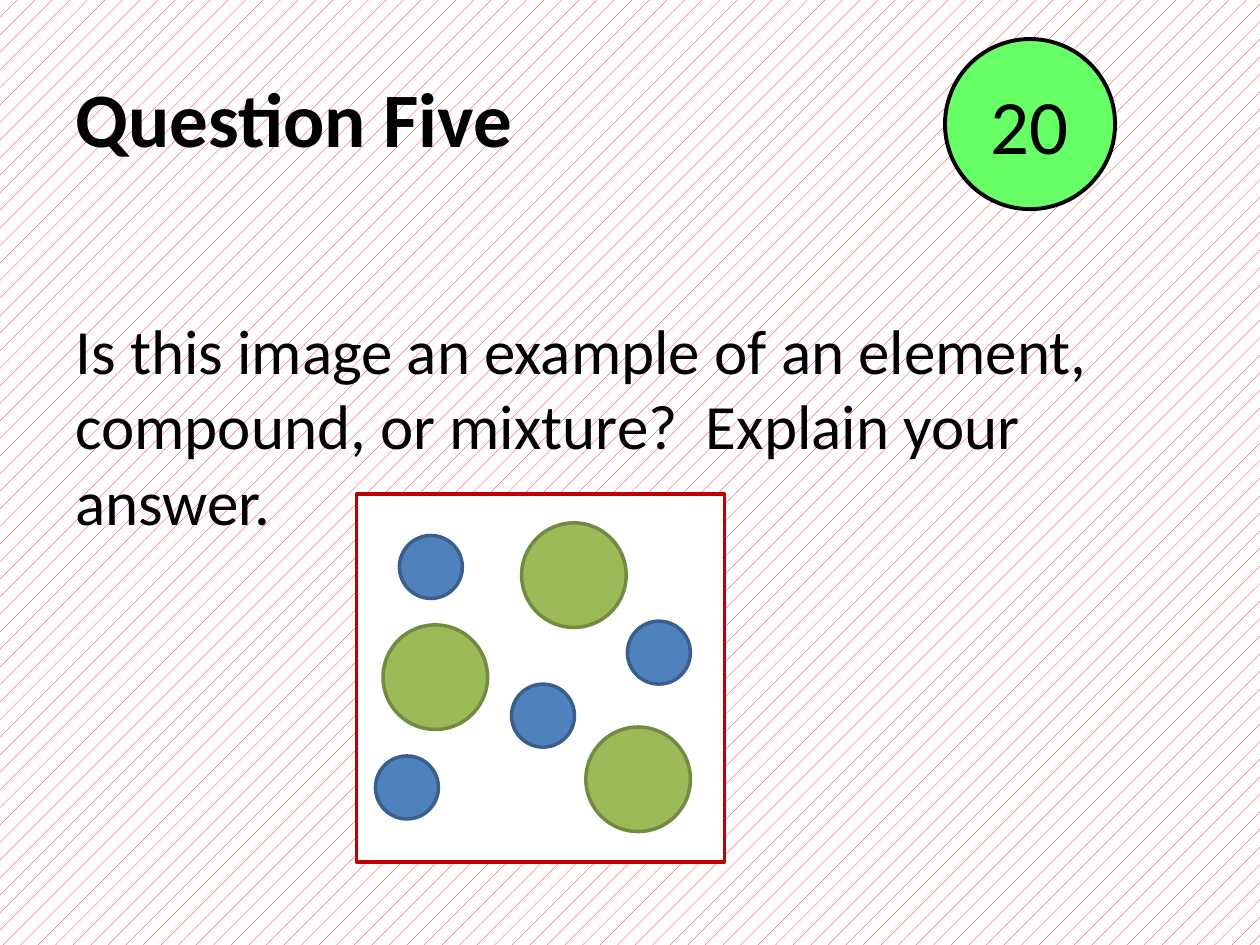
from pptx import Presentation, util as u
from pptx.dml.color import RGBColor
from pptx.enum import dml, shapes, text

BLACK = RGBColor(0x00, 0x00, 0x00)
WHITE = RGBColor(0xFF, 0xFF, 0xFF)
RED = RGBColor(0xFF, 0x00, 0x00)
DARK_RED = RGBColor(0xC0, 0x00, 0x00)
LIME = RGBColor(0x66, 0xFF, 0x66)
BLUE = RGBColor(0x4F, 0x81, 0xBD)
DARK_BLUE = RGBColor(0x3A, 0x5F, 0x8C)
GREEN = RGBColor(0x9B, 0xBB, 0x59)
DARK_GREEN = RGBColor(0x73, 0x8A, 0x42)

# Content
TITLE = "Question Five"
QUESTION = ("Is this image an example of an element, compound, or mixture?  "
            "Explain your answer.")
POINTS = "20"
ATOMS = [  # diameter, fill, outline, top-left corners
    (0.5, BLUE, DARK_BLUE, [(3.17, 4.25), (4.98, 4.93), (2.98, 6), (4.06, 5.43)]),
    (0.83, GREEN, DARK_GREEN, [(3.04, 4.96), (4.65, 5.77), (4.14, 4.15)]),
]


def place(shape, left, top, width, height):
    box = dict(left=left, top=top, width=width, height=height)
    for name, value in box.items():
        setattr(shape, name, u.Inches(value))


def write(shape, words, size, anchor, alignment, wrap=True, bold=False):
    frame = shape.text_frame
    frame.text = words
    frame_format = dict(word_wrap=wrap, vertical_anchor=anchor,
                        auto_size=text.MSO_AUTO_SIZE.NONE)
    for name, value in frame_format.items():
        setattr(frame, name, value)
    paragraph = frame.paragraphs[0]
    paragraph.alignment = alignment
    font = paragraph.runs[0].font
    for name, value in dict(name="Calibri", size=u.Pt(size), bold=bold).items():
        setattr(font, name, value)
    font.color.rgb = BLACK


def draw(slide, kind, left, top, side, fill, outline, weight=2):
    """Add a shape as wide as it is high."""
    shape = slide.shapes.add_shape(kind, *map(u.Inches, (left, top, side, side)))
    shape.shadow.inherit = False
    shape.fill.solid()
    shape.fill.fore_color.rgb = fill
    shape.line.color.rgb = outline
    shape.line.width = u.Pt(weight)
    return shape


def main():
    presentation = Presentation()
    presentation.slide_width = u.Inches(10)
    presentation.slide_height = u.Inches(7.5)
    slide = presentation.slides.add_slide(presentation.slide_layouts[5])

    # Patterned background
    background = slide.background.fill
    background.patterned()
    background.pattern = dml.MSO_PATTERN.PERCENT_5
    background.fore_color.rgb = RED
    background.back_color.rgb = WHITE

    # Title and question
    title = slide.shapes.title
    place(title, 0.5, 0.3, 9, 1.25)
    write(title, TITLE, 44, text.MSO_ANCHOR.MIDDLE, text.PP_ALIGN.LEFT, bold=True)
    question = slide.shapes.add_textbox(0, 0, 0, 0)
    place(question, 0.5, 2.42, 9, 4.28)
    write(question, QUESTION, 36, text.MSO_ANCHOR.TOP, text.PP_ALIGN.LEFT)

    # Points badge
    oval = shapes.MSO_SHAPE.OVAL
    badge = draw(slide, oval, 7.5, 0.31, 1.35, LIME, BLACK, 2.25)
    write(badge, POINTS, 44, text.MSO_ANCHOR.MIDDLE, text.PP_ALIGN.CENTER, wrap=False)

    # Particle diagram
    draw(slide, shapes.MSO_SHAPE.RECTANGLE, 2.83, 3.92, 2.92, WHITE, DARK_RED)
    for diameter, fill, outline, corners in ATOMS:
        for left, top in corners:
            draw(slide, oval, left, top, diameter, fill, outline)

    presentation.save("out.pptx")


if __name__ == "__main__":
    main()
